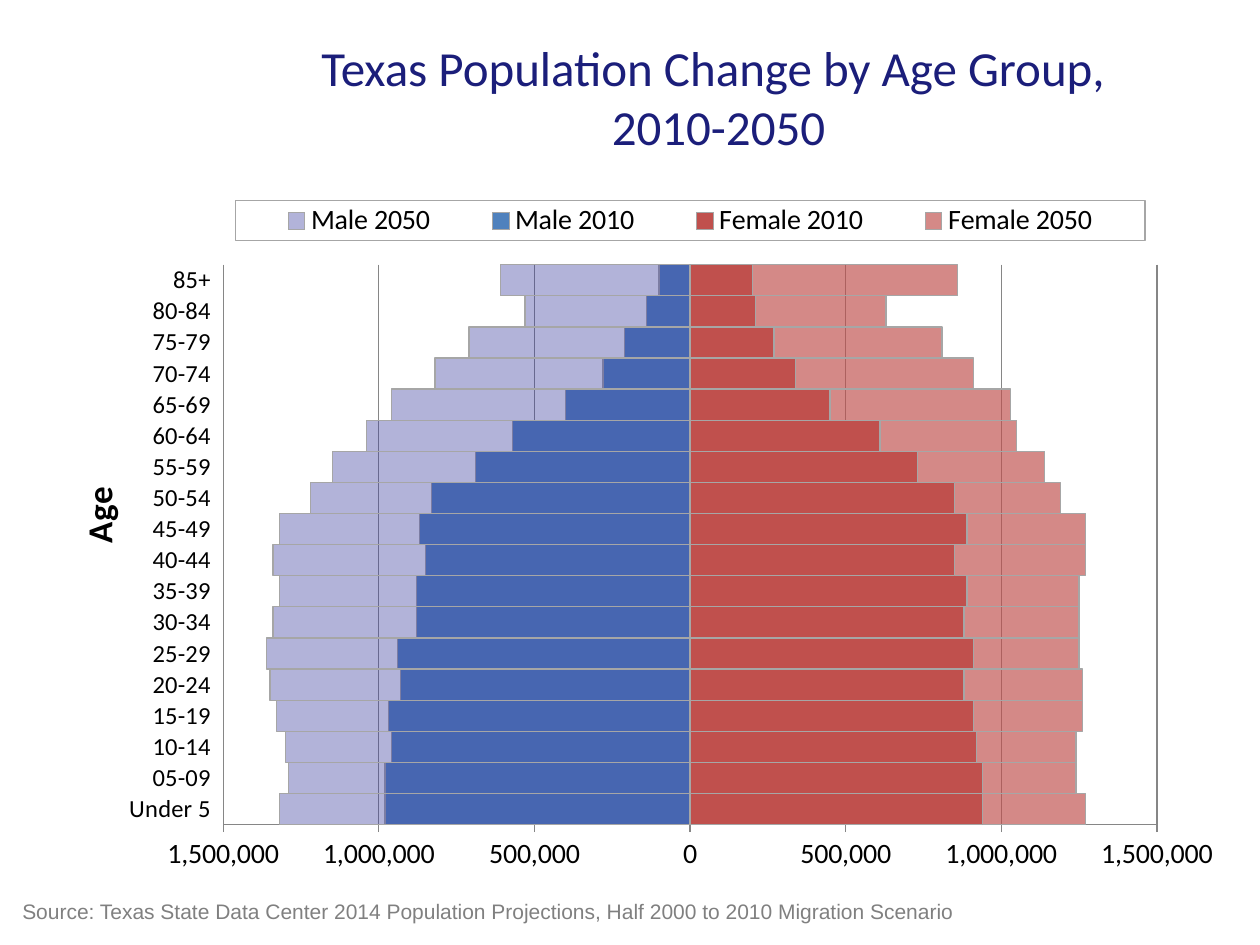
from lxml import etree
from pptx import Presentation
from pptx import util as u
from pptx.chart.data import CategoryChartData
from pptx.dml.color import RGBColor
from pptx.enum import chart as c, text as t
from pptx.oxml import parse_xml
from pptx.oxml.ns import nsdecls, qn

TITLE = ["Texas Population Change by Age Group, ", "2010-2050"]
SOURCE = ["Source: Texas State Data Center 2014 Population Projections, "
          "Half 2000 to 2010 Migration Scenario"]
AGES = ["Under 5", "05-09", "10-14", "15-19", "20-24", "25-29", "30-34", "35-39", "40-44",
        "45-49", "50-54", "55-59", "60-64", "65-69", "70-74", "75-79", "80-84", "85+"]
SERIES = [
    ("Female 2050", "C0504D", 67, 1, [1270, 1240, 1240, 1260, 1260, 1250, 1250, 1250, 1270,
                                     1270, 1190, 1140, 1050, 1030, 910, 810, 630, 860]),
    ("Female 2010", "C0504D", 100, 1, [940, 940, 920, 910, 880, 910, 880, 890, 850,
                                      890, 850, 730, 610, 450, 340, 270, 210, 200]),
    ("Male 2010", "4F81BD", 100, -1, [980, 980, 960, 970, 930, 940, 880, 880, 850,
                                     870, 830, 690, 570, 400, 280, 210, 140, 100]),
    ("Male 2050", "3B3D9F", 39, -1, [1320, 1290, 1300, 1330, 1350, 1360, 1340, 1320, 1340,
                                    1320, 1220, 1150, 1040, 960, 820, 710, 530, 610]),
]
LIMIT = 1500000
GREY, AXIS_GREY = "A6A6A6", "868686"


def color(value):
    return RGBColor.from_string(value)


def box(left, top, width, height):
    return [u.Cm(value) for value in (left, top, width, height)]


def set_font(font, size, hex_color="000000", name="Calibri", bold=False):
    font.size, font.name, font.bold = u.Pt(size), name, bold
    font.color.rgb = color(hex_color)


def set_line(line, hex_color):
    line.color.rgb = color(hex_color)
    line.width = u.Pt(0.75)


def add_text(slide, lines, place, align=t.PP_ALIGN.LEFT, hanging=0, **font):
    frame = slide.shapes.add_textbox(*box(*place)).text_frame
    frame.word_wrap = True
    for number, line in enumerate(lines):
        paragraph = frame.add_paragraph() if number else frame.paragraphs[0]
        paragraph.alignment = align
        if hanging:
            properties = paragraph._p.get_or_add_pPr()
            properties.set("marL", str(u.Cm(hanging)))
            properties.set("indent", str(-u.Cm(hanging)))
        run = paragraph.add_run()
        run.text = line
        set_font(run.font, **font)


def set_layout(element, index, inner=False, **position):
    for old in element.findall(qn("c:layout")):
        element.remove(old)
    target = '<c:layoutTarget val="inner"/>' if inner else ""
    modes = "".join(f'<c:{axis}Mode val="edge"/>' for axis in "xy")
    values = "".join(f'<c:{key} val="{value}"/>' for key, value in position.items())
    element.insert(index, parse_xml(
        f'<c:layout {nsdecls("c")}><c:manualLayout>{target}{modes}{values}'
        '</c:manualLayout></c:layout>'))


def add_pyramid(slide, place):
    data = CategoryChartData(number_format="#,##0;#,##0")
    data.categories = AGES
    for name, _, _, sign, thousands in SERIES:
        data.add_series(name, [sign * value * 1000 for value in thousands])
    chart = slide.shapes.add_chart(c.XL_CHART_TYPE.BAR_CLUSTERED, *box(*place), data).chart
    set_font(chart.font, 16)
    chart.has_title = False
    plot = chart.plots[0]
    plot.gap_width, plot.overlap, plot.vary_by_categories = 0, 100, False
    for series, (_, fill_color, opacity, _, _) in zip(plot.series, SERIES):
        series.invert_if_negative = False
        fill = series.format.fill
        fill.solid()
        fill.fore_color.rgb = color(fill_color)
        if opacity < 100:
            tone = series._element.find(qn("c:spPr")).find(".//" + qn("a:srgbClr"))
            etree.SubElement(tone, qn("a:alpha"), val=str(opacity * 1000))
        set_line(series.format.line, GREY)

    ages, people = chart.category_axis, chart.value_axis
    for axis, size in ((ages, 14), (people, 16)):
        axis.major_tick_mark = c.XL_TICK_MARK.OUTSIDE
        axis.minor_tick_mark = c.XL_TICK_MARK.NONE
        set_line(axis.format.line, AXIS_GREY)
        set_font(axis.tick_labels.font, size)
    ages.tick_label_position = c.XL_TICK_LABEL_POSITION.LOW
    people.minimum_scale, people.maximum_scale, people.major_unit = -LIMIT, LIMIT, LIMIT / 3
    people.tick_labels.number_format = "#,##0;#,##0"
    people.tick_labels.number_format_is_linked = False
    people.has_major_gridlines = True
    set_line(people.major_gridlines.format.line, AXIS_GREY)

    frame = ages.axis_title.text_frame
    run = frame.paragraphs[0].add_run()
    run.text = "Age"
    set_font(run.font, 20, bold=True)
    title = ages.axis_title._element
    body = title.find(".//" + qn("a:bodyPr"))
    body.set("rot", "-5400000")
    body.set("vert", "horz")

    chart.has_legend = True
    legend = chart.legend
    legend.position = c.XL_LEGEND_POSITION.TOP
    legend.include_in_layout = False
    set_font(legend.font, 16)
    legend._element.find(qn("c:txPr")).addprevious(parse_xml(
        f'<c:spPr {nsdecls("c", "a")}><a:ln w="9525"><a:solidFill>'
        f'<a:srgbClr val="{GREY}"/></a:solidFill></a:ln></c:spPr>'))

    set_layout(title, 1, x=0.03, y=0.47)
    set_layout(legend._element, 1, x=0.17, y=0.12, w=0.76, h=0.05)
    set_layout(chart._chartSpace.chart.plotArea, 0, inner=True, x=0.16, y=0.2, w=0.78, h=0.7)


def main():
    presentation = Presentation()
    presentation.slide_width, presentation.slide_height = u.Cm(25.4), u.Cm(19.05)
    slide = presentation.slides.add_slide(presentation.slide_layouts[6])
    add_text(slide, TITLE, (3.81, 0.64, 25.35 - 4 + 0, 1.7), t.PP_ALIGN.CENTER,
             size=28, hex_color="1B1E7A")
    add_text(slide, SOURCE, (0.2, 17.98, 24.33, 0.76), hanging=2.21,
             size=12, hex_color="808080", name="Arial")
    add_pyramid(slide, (0.64, 2.11, 24.13, 16.13))
    presentation.save("out.pptx")


if __name__ == "__main__":
    main()
